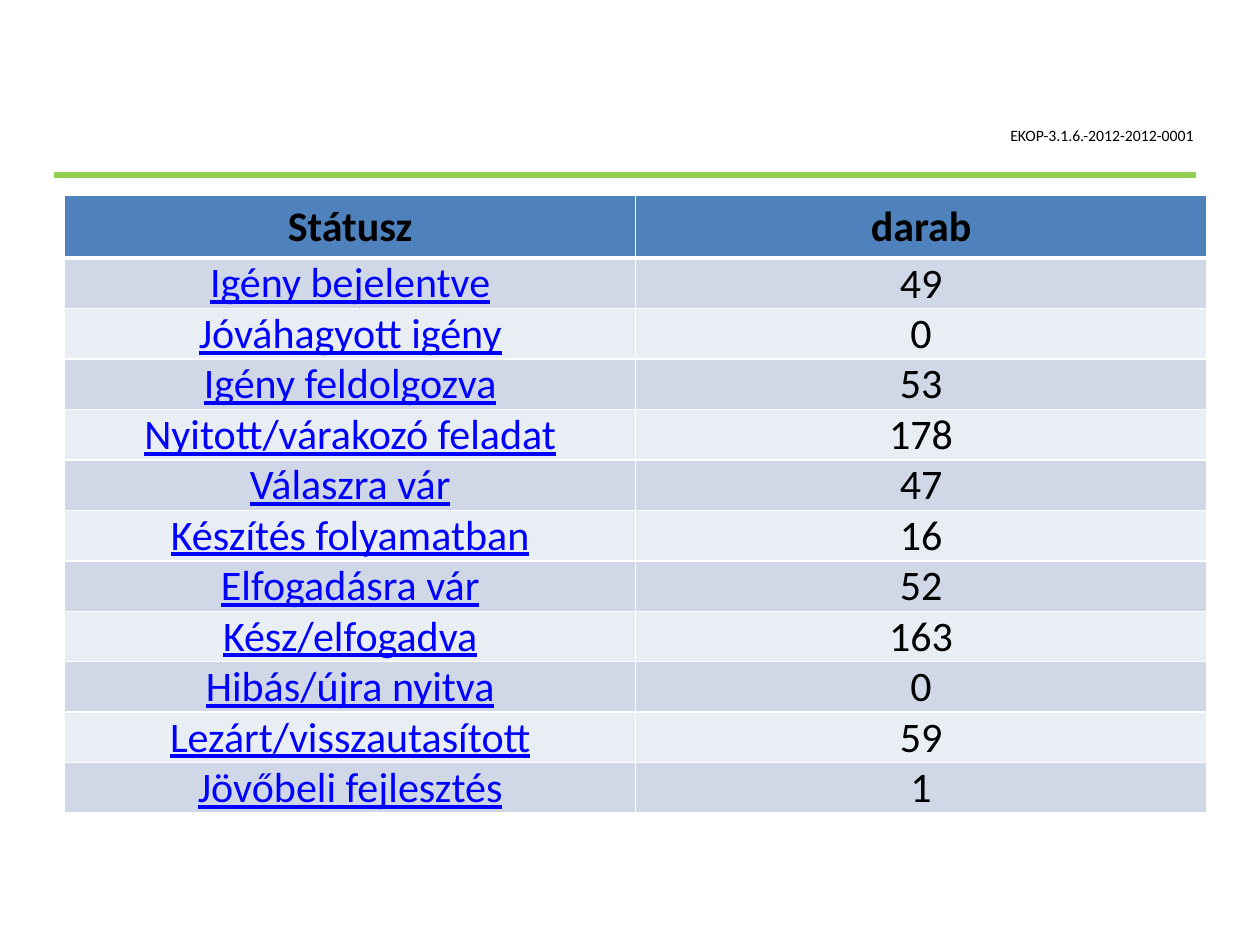
from lxml.etree import SubElement
from pptx import Presentation
from pptx.dml.color import RGBColor
from pptx.enum.shapes import MSO_CONNECTOR
from pptx.enum.text import MSO_ANCHOR as Anchor, PP_ALIGN as Align
from pptx.oxml.ns import qn
from pptx.util import Pt


def paint(target, color):
    if hasattr(target, "solid"):
        target.solid()
        target.fore_color.rgb = RGBColor.from_string(color)
    else:
        target.color.rgb = RGBColor.from_string(color)


def write_cell(cell, text, color, fill, bottom_width=1):
    cell.text = text
    paragraph = cell.text_frame.paragraphs[0]
    paragraph.alignment = Align.CENTER
    paragraph.font.name = "Calibri"
    paragraph.font.size = Pt(24)
    paint(paragraph.font, color)
    properties = cell._tc.get_or_add_tcPr()
    for side, width in (("L", 1), ("R", 1), ("T", 1), ("B", bottom_width)):
        border = SubElement(properties, qn(f"a:ln{side}"), w=str(Pt(width)))
        border_fill = SubElement(border, qn("a:solidFill"))
        SubElement(border_fill, qn("a:srgbClr"), val="FFFFFF")
    paint(cell.fill, fill)
    return paragraph


headings = ("Státusz", "darab")
statuses = [
    ("Igény bejelentve", 49),
    ("Jóváhagyott igény", 0),
    ("Igény feldolgozva", 53),
    ("Nyitott/várakozó feladat", 178),
    ("Válaszra vár", 47),
    ("Készítés folyamatban", 16),
    ("Elfogadásra vár", 52),
    ("Kész/elfogadva", 163),
    ("Hibás/újra nyitva", 0),
    ("Lezárt/visszautasított", 59),
    ("Jövőbeli fejlesztés", 1),
]
bands = ("D0D8E8", "E9EDF4")

prs = Presentation()
prs.slide_width, prs.slide_height = Pt(720), Pt(540)
slide = prs.slides.add_slide(prs.slide_layouts[6])

divider = slide.shapes.add_connector(
    MSO_CONNECTOR.STRAIGHT, Pt(31), Pt(100), Pt(683.5), Pt(100))
paint(divider.line, "92D050")
divider.line.width = Pt(3)
SubElement(divider._element.spPr, qn("a:effectLst"))

project_code = slide.shapes.add_textbox(Pt(570.25), Pt(68.5), Pt(124.5), Pt(18)).text_frame
project_code.word_wrap = True
project_code.vertical_anchor = Anchor.MIDDLE
project_code.text = "EKOP-3.1.6.-2012-2012-0001"
code_font = project_code.paragraphs[0].font
code_font.name = "Calibri"
code_font.size = Pt(9)
paint(code_font, "000000")

status_frame = slide.shapes.add_table(
    len(statuses) + 1, 2, Pt(37), Pt(111.5), Pt(652.5), Pt(353))
status_table = status_frame.table
for column in status_table.columns:
    column.width = Pt(326.25)
for row in status_table.rows:
    row.height = Pt(24.5)
status_table.rows[0].height = Pt(31)
status_frame.height = Pt(353)

for column, heading in enumerate(headings):
    write_cell(status_table.cell(0, column), heading, "000000", "4F81BD", 3).font.bold = True

for row, (status, count) in enumerate(statuses, 1):
    band = bands[(row - 1) % 2]
    status_cell, count_cell = status_table.cell(row, 0), status_table.cell(row, 1)
    write_cell(status_cell, status, "0000FF", band).font.underline = True
    write_cell(count_cell, str(count), "000000", band)
    status_cell.vertical_anchor = Anchor.BOTTOM
    for cell in (status_cell, count_cell):
        cell.margin_left = cell.margin_right = cell.margin_top = cell.margin_bottom = 0

prs.save("out.pptx")
